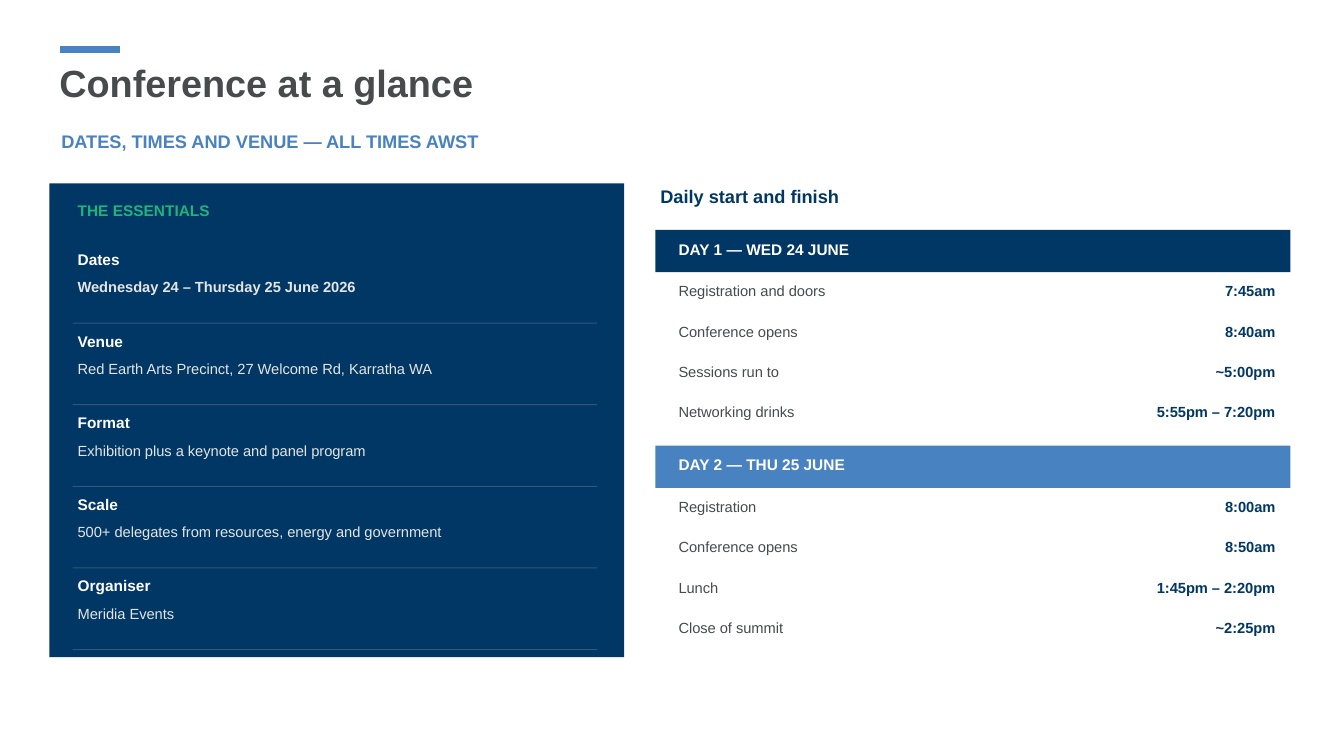
from lxml import etree
from pptx import Presentation
from pptx import util as u
from pptx.dml.color import RGBColor
from pptx.enum import shapes, text
from pptx.oxml.ns import qn

NAVY = RGBColor(0x00, 0x37, 0x64)
BLUE = RGBColor(0x49, 0x82, 0xC0)
GREEN = RGBColor(0x20, 0xB4, 0x7A)
SLATE = RGBColor(0x47, 0x4B, 0x4C)
PALE = RGBColor(0xE4, 0xE4, 0xE3)
RULE = RGBColor(0x33, 0x55, 0x77)
WHITE = RGBColor(0xFF, 0xFF, 0xFF)

TITLE = "Conference at a glance"
SUBTITLE = "DATES, TIMES AND VENUE — ALL TIMES AWST"
ESSENTIALS_HEADING = "THE ESSENTIALS"
ESSENTIALS = [
    ("Dates", "Wednesday 24 – Thursday 25 June 2026"),
    ("Venue", "Red Earth Arts Precinct, 27 Welcome Rd, Karratha WA"),
    ("Format", "Exhibition plus a keynote and panel program"),
    ("Scale", "500+ delegates from resources, energy and government"),
    ("Organiser", "Meridia Events"),
]
SCHEDULE_HEADING = "Daily start and finish"
DAYS = [
    ("DAY 1 — WED 24 JUNE", NAVY, [
        ("Registration and doors", "7:45am"),
        ("Conference opens", "8:40am"),
        ("Sessions run to", "~5:00pm"),
        ("Networking drinks", "5:55pm – 7:20pm"),
    ]),
    ("DAY 2 — THU 25 JUNE", BLUE, [
        ("Registration", "8:00am"),
        ("Conference opens", "8:50am"),
        ("Lunch", "1:45pm – 2:20pm"),
        ("Close of summit", "~2:25pm"),
    ]),
]

PANEL_LEFT, PANEL_TOP = 0.49, 1.82
ESSENTIALS_LEFT, ESSENTIALS_TOP, ESSENTIALS_PITCH = 0.72, 2.46, 0.81
SCHEDULE_LEFT, SCHEDULE_WIDTH = 6.5, 6.3
DAY_TOP, DAY_PITCH, ROW_PITCH = 2.28, 2.14, 0.4
ROW_LEFT, TIME_LEFT = 6.68, 11


def add_block(slide, left, top, width, height, color):
    """Add a plain filled rectangle."""
    block = slide.shapes.add_shape(
        shapes.MSO_SHAPE.RECTANGLE, *map(u.Inches, (left, top, width, height)))
    block.shadow.inherit = False
    block.fill.solid()
    block.fill.fore_color.rgb = color
    block.line.fill.background()


def add_text(slide, words, left, top, width, height, size, color, bold=True,
             align=text.PP_ALIGN.LEFT, insets=(0.05, 0.02), spacing=None,
             anchor=text.MSO_ANCHOR.TOP):
    """Add a one-paragraph text box."""
    box = slide.shapes.add_textbox(*map(u.Inches, (left, top, width, height)))
    frame = box.text_frame
    frame.word_wrap = True
    frame.vertical_anchor = anchor
    frame.margin_left = frame.margin_right = u.Inches(insets[0])
    frame.margin_top = frame.margin_bottom = u.Inches(insets[1])
    paragraph = frame.paragraphs[0]
    paragraph.text = words
    paragraph.alignment = align
    paragraph.line_spacing = spacing
    paragraph.font.name = "Arial"
    paragraph.font.size = u.Pt(size)
    paragraph.font.bold = bold
    paragraph.font.color.rgb = color


def add_header(slide):
    """Add the accent line, title and subtitle."""
    accent = slide.shapes.add_connector(
        shapes.MSO_CONNECTOR.STRAIGHT, *map(u.Inches, (0.6, 0.49, 1.19, 0.49)))
    accent.line.color.rgb = BLUE
    accent.line.width = u.Pt(4.5)
    etree.SubElement(accent._element.spPr, qn("a:effectLst"))
    add_text(slide, TITLE, PANEL_LEFT, 0.38, 10.55, 0.84, 27, SLATE,
             insets=(0.1, 0.05), spacing=1.1, anchor=text.MSO_ANCHOR.MIDDLE)
    add_text(slide, SUBTITLE, 0.51, 1.22, 10.55, 0.44, 13, BLUE,
             insets=(0.1, 0.05), spacing=1.1)


def add_essentials(slide):
    """Add the navy panel of key facts."""
    add_block(slide, PANEL_LEFT, PANEL_TOP, 5.7, 4.7, NAVY)
    add_text(slide, ESSENTIALS_HEADING, ESSENTIALS_LEFT, 1.98, 5.25, 0.3, 11, GREEN)
    for index, (label, detail) in enumerate(ESSENTIALS):
        top = ESSENTIALS_TOP + index * ESSENTIALS_PITCH
        add_text(slide, label, ESSENTIALS_LEFT, top, 5.25, 0.28, 11, WHITE)
        add_text(slide, detail, ESSENTIALS_LEFT, top + 0.28, 5.25, 0.46, 10.5,
                 PALE, bold=index == 0)
        add_block(slide, ESSENTIALS_LEFT, top + 0.74, 5.2, 0.01, RULE)


def add_schedule(slide):
    """Add the daily timetable."""
    add_text(slide, SCHEDULE_HEADING, SCHEDULE_LEFT, PANEL_TOP, SCHEDULE_WIDTH,
             0.32, 13, NAVY)
    for day, (heading, color, sessions) in enumerate(DAYS):
        top = DAY_TOP + day * DAY_PITCH
        add_block(slide, SCHEDULE_LEFT, top, SCHEDULE_WIDTH, 0.42, color)
        add_text(slide, heading, ROW_LEFT, top + 0.08, 6, 0.3, 11, WHITE)
        for row, (session, time) in enumerate(sessions):
            row_top = top + 0.5 + row * ROW_PITCH
            add_text(slide, session, ROW_LEFT, row_top, 4.4, 0.3, 10.5, SLATE,
                     bold=False)
            add_text(slide, time, TIME_LEFT, row_top, 1.7, 0.3, 10.5, NAVY,
                     align=text.PP_ALIGN.RIGHT)


def main():
    """Build and save the slide."""
    presentation = Presentation()
    presentation.slide_width = u.Inches(13.33)
    presentation.slide_height = u.Inches(7.5)
    slide = presentation.slides.add_slide(presentation.slide_layouts[6])
    add_header(slide)
    add_essentials(slide)
    add_schedule(slide)
    presentation.save("out.pptx")


if __name__ == "__main__":
    main()
